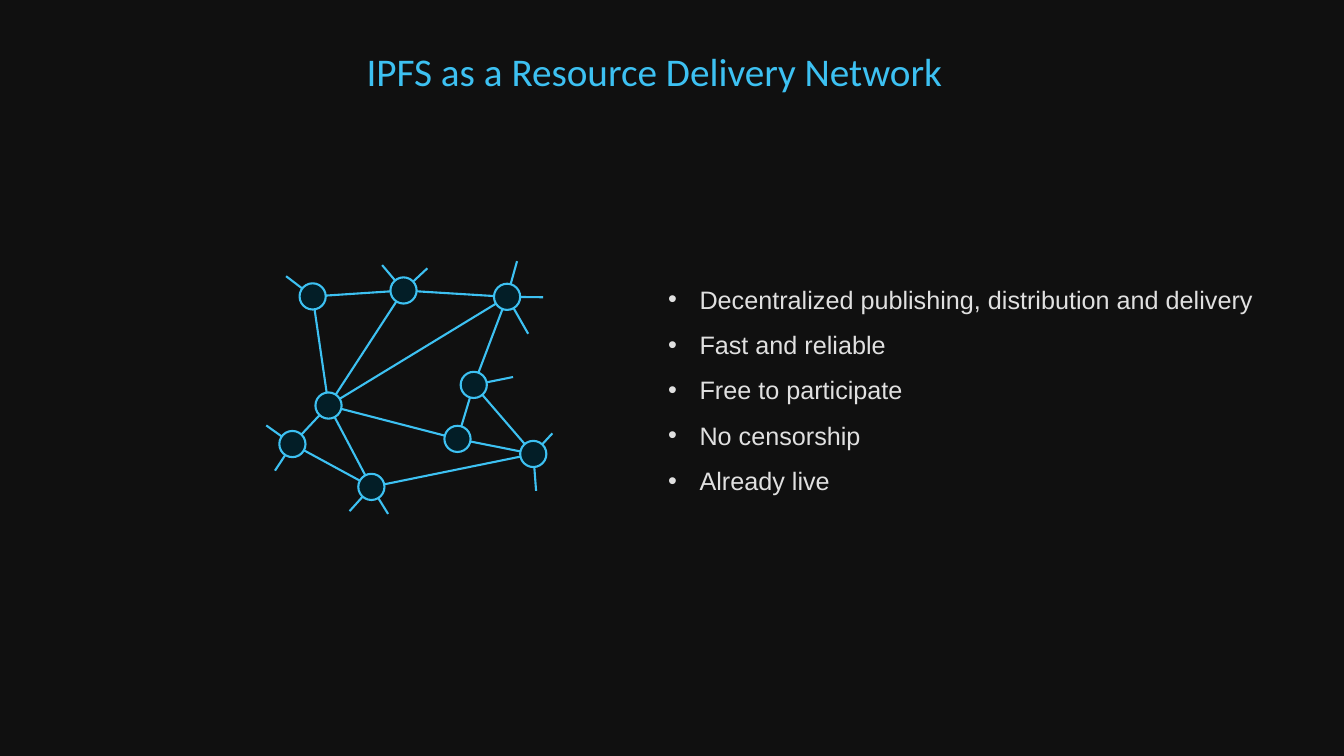
from lxml.etree import SubElement
from pptx import Presentation
from pptx.dml.color import RGBColor
from pptx.enum.shapes import MSO_CONNECTOR, MSO_SHAPE
from pptx.enum.text import MSO_AUTO_SIZE, PP_ALIGN
from pptx.oxml.ns import qn
from pptx.util import Cm, Pt

COLOURS = {"background": "101010", "accent": "3DC1F2", "node": "031E27", "text": "E0E0E0"}
NODE_SIZE = 0.66
NODES = {
    "top_middle": (10.17, 7.32),
    "top_left": (7.88, 7.47),
    "top_right": (12.78, 7.48),
    "right_low": (13.44, 11.44),
    "right_middle": (11.94, 9.7),
    "inner": (11.53, 11.06),
    "hub": (8.28, 10.22),
    "bottom": (9.36, 12.27),
    "left": (7.37, 11.19),
}
LINKS = [
    ("top_right", "top_middle"),
    ("top_right", "right_middle"),
    ("top_middle", "top_left"),
    ("hub", "top_left"),
    ("hub", "top_middle"),
    ("hub", "top_right"),
    ("inner", "right_middle"),
    ("right_low", "right_middle"),
    ("right_low", "inner"),
    ("hub", "inner"),
    ("hub", "left"),
    ("hub", "bottom"),
    ("left", "bottom"),
    ("bottom", "right_low"),
]
LOOSE_ENDS = {
    "top_left": [(7.21, 6.96)],
    "top_middle": [(9.63, 6.68), (10.77, 6.76)],
    "top_right": [(13.03, 6.58), (13.69, 7.49), (13.31, 8.41)],
    "right_middle": [(12.93, 9.5)],
    "right_low": [(13.92, 10.92), (13.51, 12.37)],
    "bottom": [(8.81, 12.88), (9.78, 12.95)],
    "left": [(6.71, 10.72), (6.93, 11.86)],
}
BENEFITS = [
    "Decentralized publishing, distribution and delivery",
    "Fast and reliable",
    "Free to participate",
    "No censorship",
    "Already live",
]


def colour(name):
    """Return the named colour."""
    return RGBColor.from_string(COLOURS[name])


class NetworkPage:
    """Draws styled elements on the current slide."""

    def __init__(self, deck):
        """Add a blank page with a dark background."""
        self.page = deck.slides.add_slide(deck.slide_layouts[6])
        self.page.background.fill.solid()
        self.page.background.fill.fore_color.rgb = colour("background")
        self.network = self.page.shapes.add_group_shape()

    def outline(self, shape):
        """Give a shape or connector the accent outline."""
        shape.line.color.rgb = colour("accent")
        shape.line.width = Pt(1.5)

    def link(self, start, end):
        """Draw a straight line between two points."""
        connector = self.network.shapes.add_connector(
            MSO_CONNECTOR.STRAIGHT, *[Cm(value) for value in (*start, *end)])
        self.outline(connector)
        SubElement(connector._element.spPr, qn("a:effectLst"))

    def node(self, centre):
        """Draw a round network node about its centre."""
        left, top = [Cm(value - NODE_SIZE / 2) for value in centre]
        circle = self.network.shapes.add_shape(
            MSO_SHAPE.FLOWCHART_CONNECTOR, left, top, Cm(NODE_SIZE), Cm(NODE_SIZE))
        circle.shadow.inherit = False
        circle.fill.solid()
        circle.fill.fore_color.rgb = colour("node")
        self.outline(circle)

    def text_frame(self, left, top, width, height):
        """Add a wrapping text box and return its frame."""
        box = self.page.shapes.add_textbox(Cm(left), Cm(top), Cm(width), Cm(height))
        box.text_frame.word_wrap = True
        box.text_frame.auto_size = MSO_AUTO_SIZE.SHAPE_TO_FIT_TEXT
        return box.text_frame

    def span(self, para, text, font, size, shade):
        """Add one run of styled text."""
        span = para.add_run()
        span.text = text
        span.font.name = font
        span.font.size = Pt(size)
        span.font.color.rgb = colour(shade)

    def title(self, text):
        """Write the centred title."""
        para = self.text_frame(5.49, 1.07, 22, 1.45).paragraphs[0]
        para.alignment = PP_ALIGN.CENTER
        self.span(para, text, "Calibri", 28, "accent")

    def bullets(self, items):
        """Write the bulleted list."""
        frame = self.text_frame(16.59, 6.65, 16.28, 6.02)
        for index, item in enumerate(items):
            para = frame.add_paragraph() if index else frame.paragraphs[0]
            para.line_spacing = 1.5
            properties = para._p.get_or_add_pPr()
            properties.set("marL", str(Cm(0.79)))
            properties.set("indent", str(Cm(-0.79)))
            SubElement(properties, qn("a:buFont")).set("typeface", "Arial")
            SubElement(properties, qn("a:buChar")).set("char", "•")
            self.span(para, item, "Arial", 18, "text")


def main():
    """Build and save the deck."""
    deck = Presentation()
    deck.slide_width, deck.slide_height = Cm(33.87), Cm(19.05)
    page = NetworkPage(deck)
    for start, end in LINKS:
        page.link(NODES[start], NODES[end])
    for name, ends in LOOSE_ENDS.items():
        for end in ends:
            page.link(NODES[name], end)
    for centre in NODES.values():
        page.node(centre)
    page.title("IPFS as a Resource Delivery Network")
    page.bullets(BENEFITS)
    deck.save("out.pptx")


if __name__ == "__main__":
    main()
